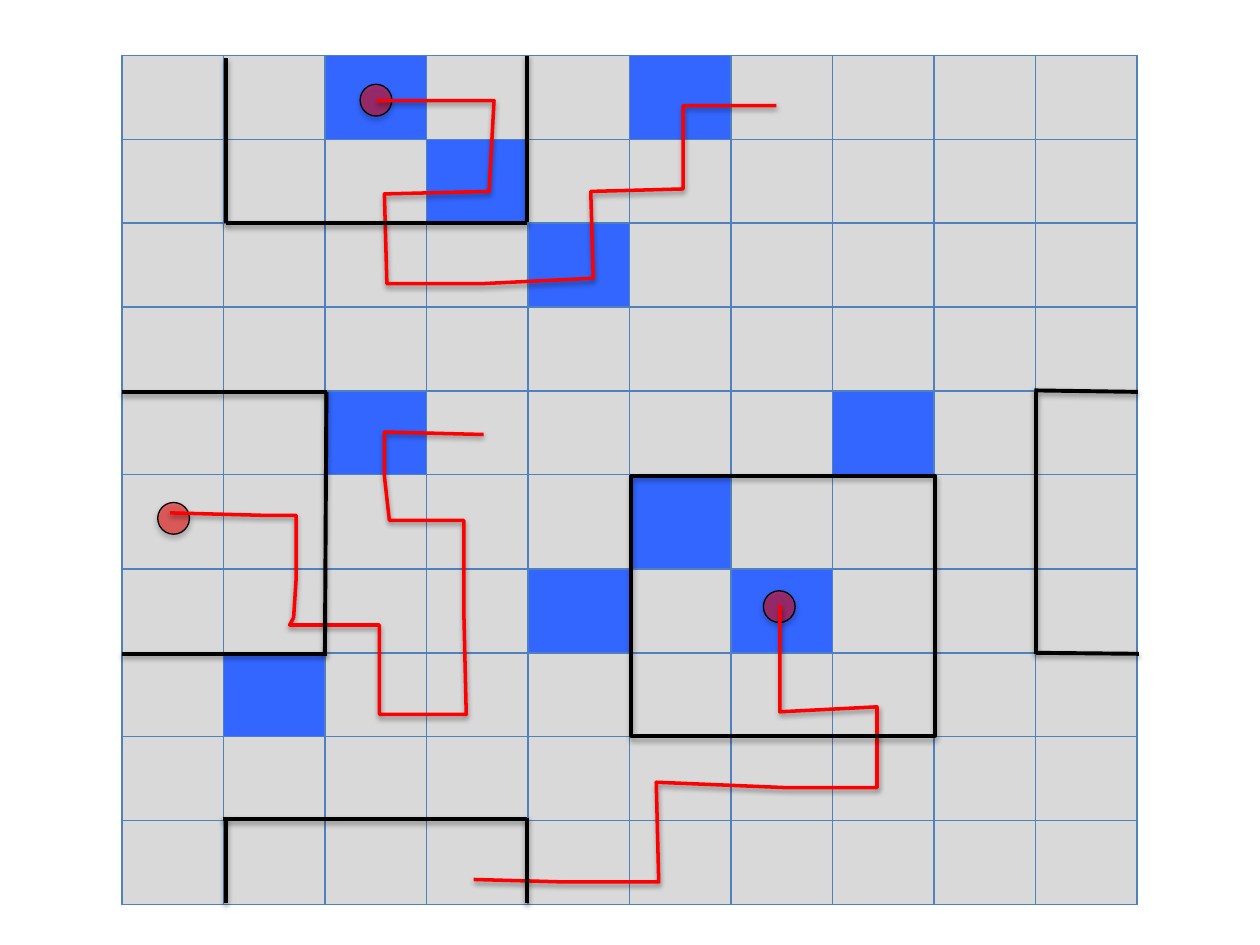
"""Build a slide with a coloured grid, framed regions and walks across its wrapped edges."""
from lxml import etree
from pptx import Presentation
from pptx import util as u
from pptx.dml import color
from pptx.enum import shapes
from pptx.oxml import ns

GRID_LEFT, GRID_TOP, GRID_WIDTH = 2.46, 1.12, 20.47
SIZE, TALL_ROW = 10, 5
ROW_HEIGHT, TALL_HEIGHT = 1.69, 1.9
MARKED = {(0, 2), (0, 5), (1, 3), (2, 4), (4, 2), (4, 7), (5, 5), (6, 4), (6, 6), (7, 1)}

DOT_SIZE = 0.64
DOTS = [(7.26, 1.7), (3.18, 10.13), (15.39, 11.91)]

WALKS = [
    [(3.43, 10.34), (5.33, 10.39), (5.97, 10.39), (5.97, 11.68), (5.92, 12.45), (5.84, 12.6),
     (7.65, 12.6), (7.65, 14.4), (9.4, 14.4), (9.35, 12.29), (9.35, 10.49), (7.85, 10.49),
     (7.75, 9.6), (7.75, 8.71), (9.75, 8.76)],
    [(7.59, 2.03), (9.96, 2.03), (9.86, 3.86), (7.75, 3.91), (7.8, 5.72), (9.7, 5.72),
     (11.96, 5.61), (11.91, 3.86), (13.77, 3.81), (13.77, 2.13), (15.65, 2.13)],
    [(15.72, 12.19), (15.72, 14.35), (17.68, 14.25), (17.68, 15.88), (15.88, 15.88),
     (13.23, 15.77), (13.28, 17.78), (11.38, 17.78), (9.55, 17.73)],
]

FRAME = (12.73, 9.6, 6.12, 5.23)
EDGES = [
    (2.46, 7.9, 6.6, 7.9), (2.46, 13.18, 6.6, 13.18), (6.58, 7.9, 6.55, 13.18),
    (20.88, 7.9, 20.88, 13.18), (20.85, 7.87, 22.94, 7.9), (20.88, 13.16, 22.96, 13.18),
    (4.55, 4.5, 4.55, 1.17), (4.55, 4.5, 10.62, 4.5), (10.62, 4.47, 10.62, 1.12),
    (4.55, 18.21, 4.55, 16.48), (4.5, 16.51, 10.62, 16.51), (10.62, 18.21, 10.62, 16.48),
]


def rgb(value):
    return color.RGBColor.from_string(value)


def add_node(parent, tag, **attributes):
    node = etree.SubElement(parent, ns.qn(tag))
    for name, value in attributes.items():
        node.set(name, str(value))
    return node


def add_colour(parent, value, opacity=100):
    node = add_node(parent, "a:srgbClr", val=value)
    if opacity < 100:
        add_node(node, "a:alpha", val=opacity * 1000)


class Board:
    style = {
        "cell": "D9D9D9", "marked": "3366FF", "grid": "4F81BD",
        "dot": ("000000", {"width": u.Pt(0.75)}),
        "walk": ("FF0000", {"width": u.Pt(2)}),
        "edge": ("000000", {"width": u.Pt(2.25)}),
        "solid_shadow": (35, 1.8), "line_shadow": (38, 1.6),
    }

    def __init__(self, slide):
        self.slide = slide

    def outline(self, shape, name):
        colour, formats = self.style[name]
        shape.line.color.rgb = rgb(colour)
        for attribute, value in formats.items():
            setattr(shape.line, attribute, value)

    def cast_shadow(self, shape, name):
        opacity, distance = self.style[name]
        effects = add_node(shape._element.spPr, "a:effectLst")
        shadow = add_node(effects, "a:outerShdw", blurRad=u.Pt(3.1), dist=u.Pt(distance),
                          dir=5400000, rotWithShape=0)
        add_colour(shadow, "000000", opacity)

    def border(self, cell):
        properties = cell._tc.get_or_add_tcPr()
        for side in ("a:lnL", "a:lnR", "a:lnT", "a:lnB"):
            line = add_node(properties, side, w=u.Pt(1))
            add_colour(add_node(line, "a:solidFill"), self.style["grid"])

    def grid(self):
        heights = [TALL_HEIGHT if row == TALL_ROW else ROW_HEIGHT for row in range(SIZE)]
        frame = self.slide.shapes.add_table(SIZE, SIZE, u.Cm(GRID_LEFT), u.Cm(GRID_TOP),
                                            u.Cm(GRID_WIDTH), u.Cm(sum(heights)))
        table = frame.table
        for attribute, value in {"first_row": False, "horz_banding": False}.items():
            setattr(table, attribute, value)
        for column in table.columns:
            column.width = u.Cm(GRID_WIDTH / SIZE)
        for row, height in enumerate(heights):
            table.rows[row].height = u.Cm(height)
            for column in range(SIZE):
                cell = table.cell(row, column)
                self.border(cell)
                cell.fill.solid()
                name = "marked" if (row, column) in MARKED else "cell"
                cell.fill.fore_color.rgb = rgb(self.style[name])

    def dot(self, left, top):
        shape = self.slide.shapes.add_shape(shapes.MSO_SHAPE.OVAL, u.Cm(left), u.Cm(top),
                                            u.Cm(DOT_SIZE), u.Cm(DOT_SIZE))
        shape.fill.solid()
        shape.fill.fore_color.rgb = rgb("FF0000")
        fill_colour = shape._element.spPr.find(ns.qn("a:solidFill"))[0]
        add_node(fill_colour, "a:alpha", val=50000)
        self.outline(shape, "dot")
        self.cast_shadow(shape, "solid_shadow")

    def walk(self, points):
        start, *others = [(u.Cm(x), u.Cm(y)) for x, y in points]
        builder = self.slide.shapes.build_freeform(*start)
        builder.add_line_segments(others, close=False)
        shape = builder.convert_to_shape()
        shape.fill.background()
        self.outline(shape, "walk")
        self.cast_shadow(shape, "line_shadow")

    def frame(self, *box):
        shape = self.slide.shapes.add_shape(shapes.MSO_SHAPE.RECTANGLE, *map(u.Cm, box))
        shape.fill.background()
        self.outline(shape, "edge")
        self.cast_shadow(shape, "solid_shadow")

    def edge(self, *ends):
        connector = self.slide.shapes.add_connector(shapes.MSO_CONNECTOR.STRAIGHT,
                                                    *map(u.Cm, ends))
        self.outline(connector, "edge")
        self.cast_shadow(connector, "line_shadow")


def main():
    presentation = Presentation()
    presentation.slide_width, presentation.slide_height = u.Cm(25.4), u.Cm(19.05)
    board = Board(presentation.slides.add_slide(presentation.slide_layouts[6]))
    board.grid()
    for position in DOTS:
        board.dot(*position)
    for points in WALKS:
        board.walk(points)
    board.frame(*FRAME)
    for ends in EDGES:
        board.edge(*ends)
    presentation.save("out.pptx")


if __name__ == "__main__":
    main()
